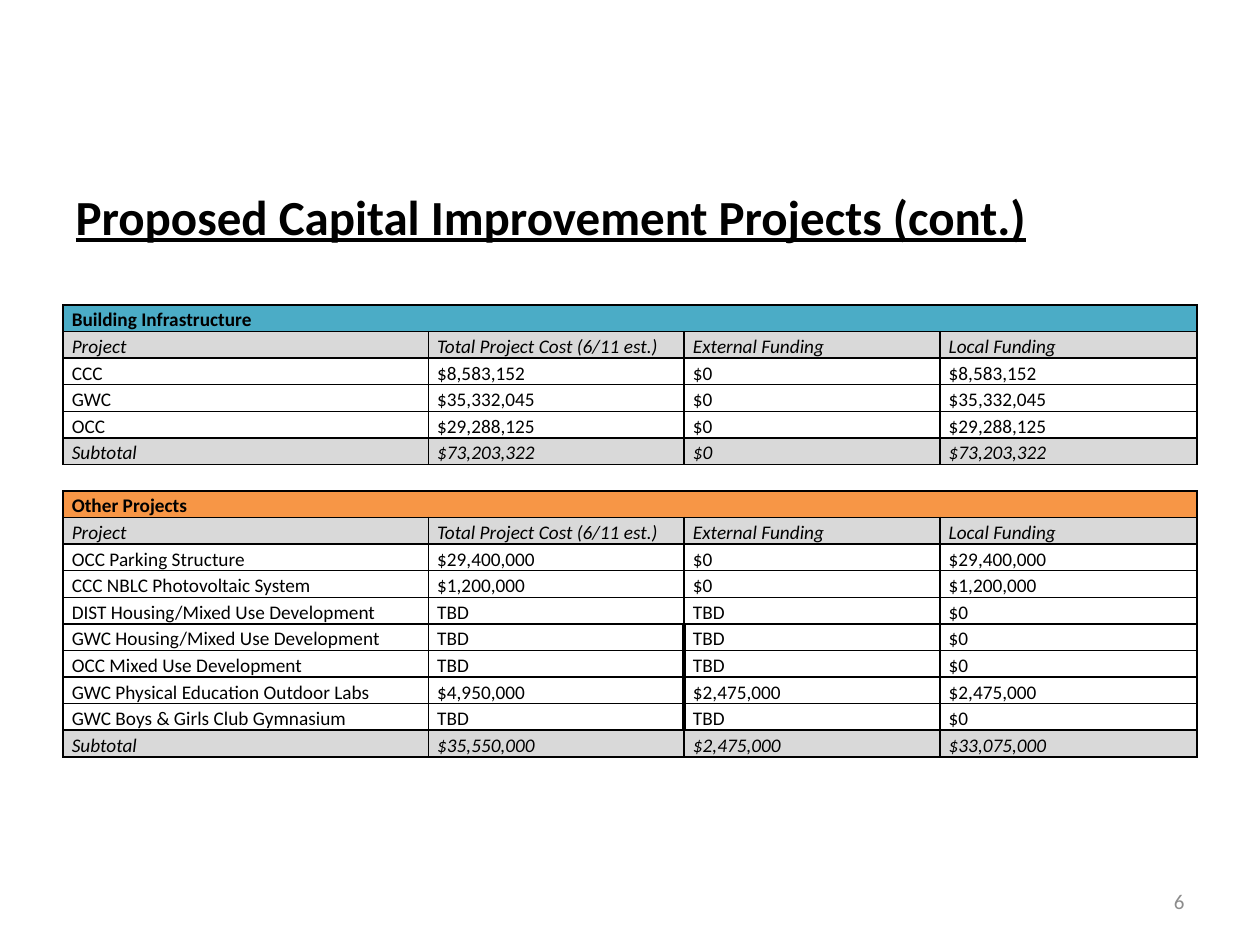
import pptx
import pptx.util
import pptx.dml.color
import pptx.enum.text
import pptx.oxml.ns
from lxml import etree

Inches, Pt = pptx.util.Inches, pptx.util.Pt
RGB = pptx.dml.color.RGBColor.from_string
ALIGN = pptx.enum.text.PP_ALIGN
MIDDLE = pptx.enum.text.MSO_ANCHOR.MIDDLE

TITLE = "Proposed Capital Improvement Projects (cont.)"
PAGE = "6"
HEADS = ("Project", "Total Project Cost (6/11 est.)", "External Funding", "Local Funding")
GROUPS = [
    {"name": "Building Infrastructure", "fill": "teal", "thick": (), "rows": [
        ("CCC", "$8,583,152", "$0", "$8,583,152"),
        ("GWC", "$35,332,045", "$0", "$35,332,045"),
        ("OCC", "$29,288,125", "$0", "$29,288,125")],
     "total": ("Subtotal", "$73,203,322", "$0", "$73,203,322")},
    {"name": "Other Projects", "fill": "orange", "thick": range(3, 7), "rows": [
        ("OCC Parking Structure", "$29,400,000", "$0", "$29,400,000"),
        ("CCC NBLC Photovoltaic System", "$1,200,000", "$0", "$1,200,000"),
        ("DIST Housing/Mixed Use Development", "TBD", "TBD", "$0"),
        ("GWC Housing/Mixed Use Development", "TBD", "TBD", "$0"),
        ("OCC Mixed Use Development", "TBD", "TBD", "$0"),
        ("GWC Physical Education Outdoor Labs", "$4,950,000", "$2,475,000", "$2,475,000"),
        ("GWC Boys & Girls Club Gymnasium", "TBD", "TBD", "$0")],
     "total": ("Subtotal", "$35,550,000", "$2,475,000", "$33,075,000")},
]
WIDTHS = (2.9, 2.03, 2.03, 2.04)
ROW = 0.21

THEME = {
    "font": "Calibri",
    "black": "000000", "white": "FFFFFF", "gray": "D9D9D9", "dim": "8C8C8C",
    "teal": "4BACC6", "orange": "F79646",
    "title": 28, "cell": 11, "page": 12,
    "thin": 1, "thick": 2.25,
}


def put(item, **values):
    for name, value in values.items():
        setattr(item, name, value)


def style(run, size, color="black", **marks):
    put(run.font, name=THEME["font"], size=Pt(THEME[size]), **marks)
    run.font.color.rgb = RGB(THEME[color])


def edge(cell, side, width):
    """Draw one cell border; a width of None hides it."""
    qn = pptx.oxml.ns.qn
    line = etree.SubElement(cell._tc.get_or_add_tcPr(), qn("a:ln" + side))
    if width is None:
        etree.SubElement(line, qn("a:noFill"))
        return
    line.set("w", str(Pt(THEME[width])))
    fill = etree.SubElement(line, qn("a:solidFill"))
    etree.SubElement(fill, qn("a:srgbClr")).set("val", THEME["black"])


def plan():
    """List the rows as (kind, texts, fill, thick)."""
    rows = []
    for group in GROUPS:
        if rows:
            rows.append(("gap", ("",) * 4, "white", False))
        rows.append(("band", (group["name"], "", "", ""), group["fill"], False))
        rows.append(("head", HEADS, "gray", False))
        for i, texts in enumerate(group["rows"]):
            rows.append(("item", texts, None, i in group["thick"]))
        rows.append(("total", group["total"], "gray", False))
    return rows


def fill_cell(cell, col, kind, text, fill, thick):
    put(cell, margin_left=Inches(0.07), margin_right=Inches(0.07),
        margin_top=0, margin_bottom=0)
    para = cell.text_frame.paragraphs[0]
    if text:
        para.line_spacing = 1.15
        run = para.add_run()
        run.text = text
        style(run, "cell", bold=kind == "band", italic=kind in ("head", "total"))
    else:
        end = etree.SubElement(para._p, pptx.oxml.ns.qn("a:endParaRPr"))
        end.set("sz", str(THEME["cell"] * 100))
    side = None if kind == "gap" else "thin"
    edge(cell, "L", "thick" if thick and col == 2 else side)
    edge(cell, "R", "thick" if thick and col == 1 else side)
    edge(cell, "T", "thin")
    edge(cell, "B", "thin")
    if fill:
        cell.fill.solid()
        cell.fill.fore_color.rgb = RGB(THEME[fill])
    else:
        cell.fill.background()


def add_costs(slide):
    rows = plan()
    table = slide.shapes.add_table(
        len(rows), len(WIDTHS), Inches(0.5), Inches(2.42),
        Inches(sum(WIDTHS)), Inches(ROW * len(rows))).table
    put(table, first_row=False, horz_banding=False)
    for column, width in zip(table.columns, WIDTHS):
        column.width = Inches(width)
    for r, (kind, texts, fill, thick) in enumerate(rows):
        table.rows[r].height = Inches(ROW)
        for c, text in enumerate(texts):
            fill_cell(table.cell(r, c), c, kind, text, fill, thick)
        if kind == "band":
            table.cell(r, 0).merge(table.cell(r, len(WIDTHS) - 1))


def add_title(slide):
    title = slide.shapes.title
    put(title, left=Inches(0.5), top=Inches(1.17), width=Inches(9), height=Inches(1.08))
    put(title.text_frame, text=TITLE, vertical_anchor=MIDDLE, word_wrap=True)
    para = title.text_frame.paragraphs[0]
    para.alignment = ALIGN.LEFT
    style(para.runs[0], "title", bold=True, underline=True)


def add_page(slide):
    box = slide.shapes.add_textbox(Inches(7.17), Inches(6.95), Inches(2.33), Inches(0.4))
    put(box.text_frame, text=PAGE, vertical_anchor=MIDDLE, word_wrap=True)
    para = box.text_frame.paragraphs[0]
    para.alignment = ALIGN.RIGHT
    style(para.runs[0], "page", "dim")


def main():
    deck = pptx.Presentation()
    put(deck, slide_width=Inches(10), slide_height=Inches(7.5))
    slide = deck.slides.add_slide(deck.slide_layouts[5])
    add_page(slide)
    add_title(slide)
    add_costs(slide)
    deck.save("out.pptx")


if __name__ == "__main__":
    main()
